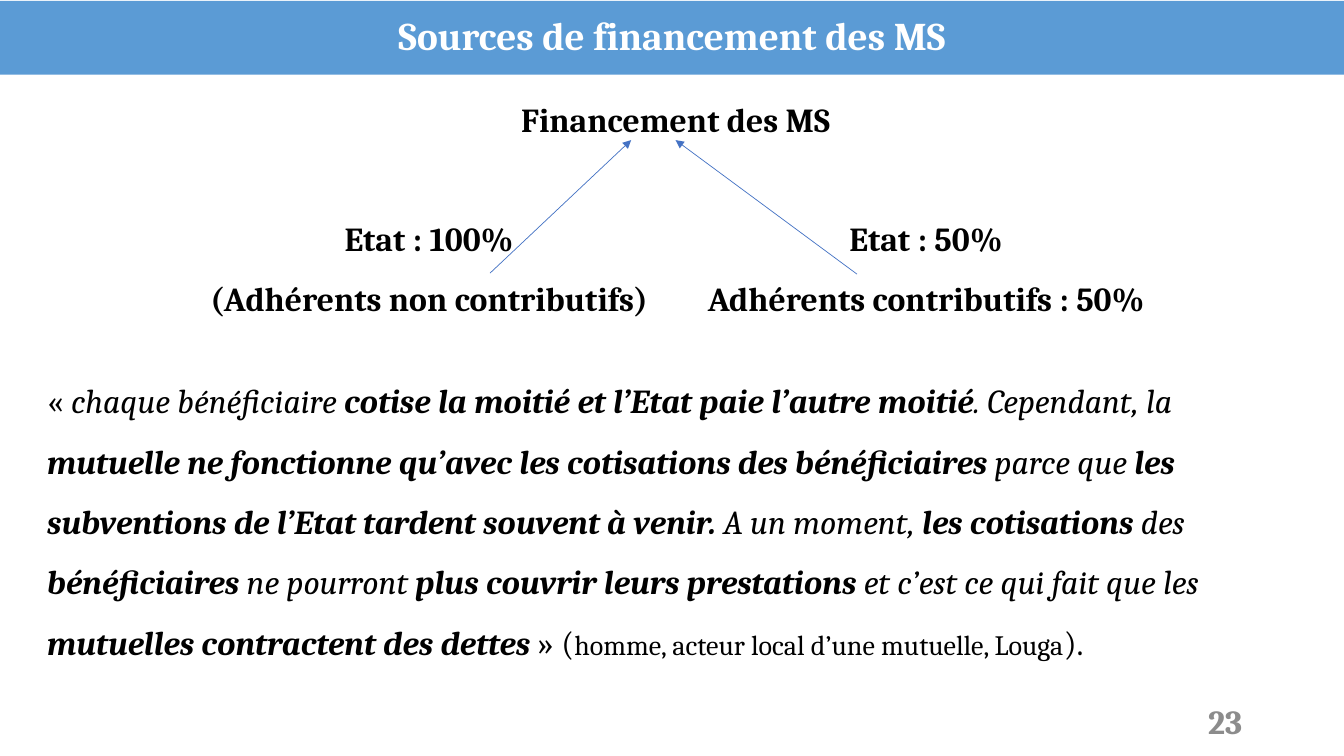
from dataclasses import dataclass

from lxml import etree
from pptx import Presentation
from pptx.dml.color import RGBColor
from pptx.enum.shapes import MSO_CONNECTOR
from pptx.enum.text import MSO_ANCHOR, MSO_AUTO_SIZE, PP_ALIGN
from pptx.oxml.ns import qn
from pptx.util import Inches, Pt

STRAIGHT = MSO_CONNECTOR.STRAIGHT
MIDDLE, TOP = MSO_ANCHOR.MIDDLE, MSO_ANCHOR.TOP
LEFT, CENTER, RIGHT = PP_ALIGN.LEFT, PP_ALIGN.CENTER, PP_ALIGN.RIGHT
GROW, FIXED = MSO_AUTO_SIZE.SHAPE_TO_FIT_TEXT, MSO_AUTO_SIZE.NONE


@dataclass(frozen=True)
class Theme:
    font: str = "Cambria"
    banner: RGBColor = RGBColor(0x5B, 0x9B, 0xD5)
    white: RGBColor = RGBColor(0xFF, 0xFF, 0xFF)
    black: RGBColor = RGBColor(0, 0, 0)
    grey: RGBColor = RGBColor(0x8C, 0x8C, 0x8C)
    arrow: RGBColor = RGBColor(0x44, 0x72, 0xC4)
    title_size: int = 28
    body_size: int = 24
    source_size: int = 20


theme = Theme()


def add_span(para, text, size=theme.body_size, color=theme.black, style="b"):
    """Add one run; style holds b for bold and i for italic."""
    span = para.add_run()
    span.text = text
    font = span.font
    font.name, font.size = theme.font, Pt(size)
    font.bold, font.italic = "b" in style, "i" in style
    font.color.rgb = color


def add_text(place, paragraphs, align, spacing=1.5, anchor=TOP, fit=GROW):
    """Add a text box; each paragraph is a list of add_span keyword sets."""
    box = page.shapes.add_textbox(*[Inches(value) for value in place])
    frame = box.text_frame
    frame.word_wrap = True
    frame.auto_size = fit
    frame.vertical_anchor = anchor
    for index, spans in enumerate(paragraphs):
        para = frame.add_paragraph() if index else frame.paragraphs[0]
        para.alignment, para.line_spacing = align, spacing
        for span in spans:
            add_span(para, **span)


deck = Presentation()
deck.slide_width, deck.slide_height = Inches(13.33), Inches(7.5)
page = deck.slides.add_slide(deck.slide_layouts[5])

# Title banner
title = page.shapes.title
title.left, title.top = Inches(0), Inches(0.01)
title.width, title.height = Inches(13.33), Inches(0.73)
title.fill.solid()
title.fill.fore_color.rgb = theme.banner
title.text_frame.auto_size = FIXED
title.text_frame.vertical_anchor = MIDDLE
heading = title.text_frame.paragraphs[0]
heading.alignment, heading.line_spacing = CENTER, 0.9
add_span(heading, "Sources de financement des MS", theme.title_size, theme.white)

# Quotation
quote = [
    ("« ", ""),
    ("chaque bénéficiaire ", "i"),
    ("cotise la moitié et l’Etat paie l’autre moitié", "bi"),
    (". Cependant, la ", "i"),
    ("mutuelle ne fonctionne qu’avec les cotisations des bénéficiaires ", "bi"),
    ("parce que ", "i"),
    ("les subventions de l’Etat tardent souvent à venir.", "bi"),
    (" A un moment, ", "i"),
    ("les cotisations ", "bi"),
    ("des ", "i"),
    ("bénéficiaires", "bi"),
    (" ne pourront ", "i"),
    ("plus couvrir leurs prestations ", "bi"),
    ("et c’est ce qui fait que les ", "i"),
    ("mutuelles contractent des dettes", "bi"),
    (" » (", ""),
]
quote_spans = [dict(text=text, style=style) for text, style in quote]
quote_spans.append(dict(text="homme, acteur local d’une mutuelle, Louga",
                        size=theme.source_size, style=""))
quote_spans.append(dict(text=").", style=""))
add_text((0.37, 3.52, 12.66, 3.08), [quote_spans], LEFT)

# Funding tree labels
labels = [
    ((4.38, 0.73, 4.64, 0.66), ["Financement des MS"]),
    ((1.93, 1.91, 4.65, 1.26), ["Etat : 100%", "(Adhérents non contributifs)"]),
    ((6.92, 1.91, 4.53, 1.26), ["Etat : 50%", "Adhérents contributifs : 50%"]),
]
for place, lines in labels:
    add_text(place, [[dict(text=line)] for line in lines], CENTER)

# Arrows from the two sources up to the funding label
for start_x, start_y, end_x in [(4.86, 2.71, 6.26), (8.5, 2.72, 6.7)]:
    arrow = page.shapes.add_connector(
        STRAIGHT, Inches(start_x), Inches(start_y), Inches(end_x), Inches(1.39))
    arrow.line.color.rgb = theme.arrow
    arrow.line.width = Pt(0.5)
    etree.SubElement(arrow.line._get_or_add_ln(), qn("a:tailEnd"), type="triangle")
    etree.SubElement(arrow._element.spPr, qn("a:effectLst"))

# Page number
number = dict(text="23", color=theme.grey)
add_text((9.42, 6.95, 3, 0.4), [[number]], RIGHT, spacing=1, anchor=MIDDLE, fit=FIXED)

deck.save("out.pptx")
